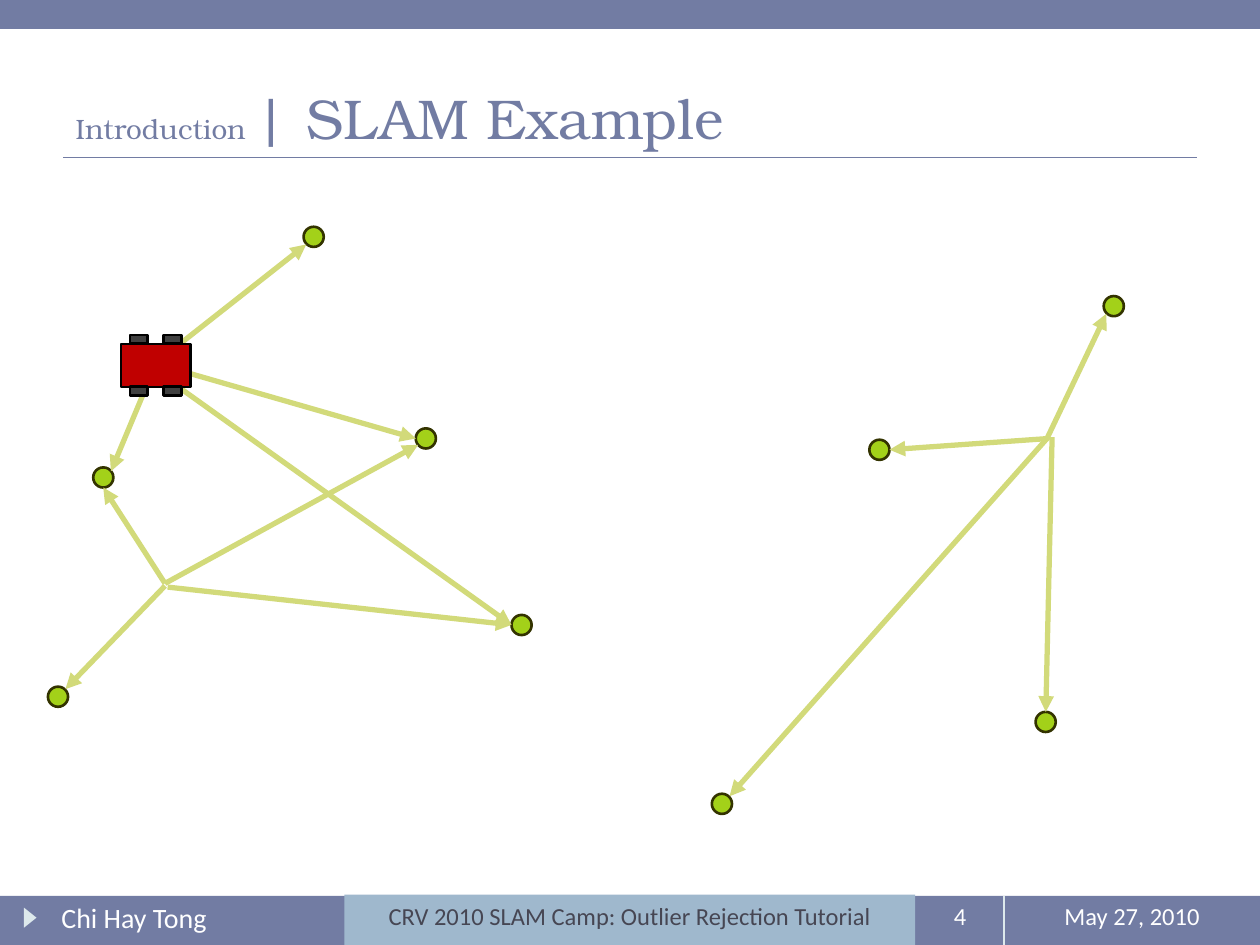
import dataclasses

import lxml.etree
import pptx
import pptx.dml.color
import pptx.enum.shapes
import pptx.enum.text
import pptx.oxml.ns
import pptx.util

Pt = pptx.util.Pt
Rgb = pptx.dml.color.RGBColor.from_string
Kind = pptx.enum.shapes.MSO_SHAPE
Align = pptx.enum.text.PP_ALIGN
Anchor = pptx.enum.text.MSO_ANCHOR
qn = pptx.oxml.ns.qn


@dataclasses.dataclass(frozen=True)
class Theme:
    slate: str = "727CA3"
    pale: str = "DDE9EC"
    sky: str = "9FB8CD"
    dark: str = "464653"
    white: str = "FFFFFF"
    green: str = "99CC00"
    rim: str = "333300"
    ray: str = "D2DA7A"
    red: str = "C00000"
    wheel: str = "404040"
    black: str = "000000"
    serif: str = "TeX Gyre Bonum"
    sans: str = "Calibri"
    large: int = 32
    mid: int = 16
    small: int = 14


theme = Theme()


def write(frame, text, size=theme.small, color=theme.white, font=theme.sans, align=Align.LEFT):
    """Add a run to the first paragraph of the frame."""
    frame.word_wrap = True
    para = frame.paragraphs[0]
    para.alignment = align
    run = para.add_run()
    run.text = text
    run.font.size = Pt(size)
    run.font.name = font
    run.font.color.rgb = Rgb(color)


def draw(shapes, kind, box, fill, edge=None):
    """Add a preset shape with a flat fill and, if edge is given, an outline."""
    shape = shapes.add_shape(kind, *map(Pt, box))
    shape.shadow.inherit = False
    shape.fill.solid()
    shape.fill.fore_color.rgb = Rgb(fill)
    if edge:
        shape.line.color.rgb = Rgb(edge)
        shape.line.width = Pt(1.5)
    else:
        shape.line.fill.background()
    return shape


deck = pptx.Presentation()
deck.slide_width, deck.slide_height = Pt(720), Pt(540)
slide = deck.slides.add_slide(deck.slide_layouts[5])
shapes = slide.shapes

# Title
title = shapes.title
title.left, title.top, title.width, title.height = map(Pt, (36, 18, 648, 72))
title.text_frame.vertical_anchor = Anchor.BOTTOM
for text, size in (("Introduction ", theme.mid), ("| SLAM Example", theme.large)):
    write(title.text_frame, text, size=size, color=theme.slate, font=theme.serif)

# Bars and footer
draw(shapes, Kind.RECTANGLE, (0, 0, 720, 16.5), theme.slate)
draw(shapes, Kind.RECTANGLE, (0, 512, 720, 28), theme.slate)
mark = draw(shapes, Kind.ISOSCELES_TRIANGLE, (11.5, 520.8, 11.5, 7.2), theme.pale)
mark.rotation = 90

foot, tall = 511.2, 28.8
for left, width, text, size, align in (
    (28, 156, "Chi Hay Tong", theme.mid, Align.LEFT),
    (523.4, 50.4, "4", theme.small, Align.CENTER),
    (573.8, 146.2, "May 27, 2010", theme.small, Align.CENTER),
):
    label = shapes.add_textbox(Pt(left), Pt(foot), Pt(width), Pt(tall))
    write(label.text_frame, text, size=size, align=align)

event = draw(shapes, Kind.RECTANGLE, (196.8, foot, 326.2, tall), theme.sky)
event.text_frame.vertical_anchor = Anchor.TOP
write(event.text_frame, "CRV 2010 SLAM Camp: Outlier Rejection Tutorial",
      color=theme.dark, align=Align.CENTER)

# Landmarks
for left, top in (
    (173.5, 129.6), (53.3, 267.1), (237.6, 244.8),
    (630.7, 169.2), (496.8, 251.3), (591.8, 406.8),
    (292.3, 351.4), (27.4, 392.4), (406.8, 453.6),
):
    dot = draw(shapes, Kind.OVAL, (left, top, 11.5, 11.5), theme.green, theme.rim)
    tint = dot.fill._xPr.find(qn("a:solidFill"))[0]
    lxml.etree.SubElement(tint, qn("a:alpha"), val="90000")

# Rules, then sightings from each pose to its landmarks
rules = [(36, 90, 684, 90, theme.slate), (573.8, 512, 573.8, 540, theme.pale)]
rays = [
    (90, 206.6, 175, 139.7),
    (90, 208.1, 237.6, 250.6),
    (87.8, 211, 63.4, 269.3),
    (87.8, 211, 292.3, 357.1),
    (599, 250.6, 508.3, 257),
    (601.2, 249.8, 597.6, 406.8),
    (599, 249.8, 416.9, 455),
    (598.3, 250.6, 632.2, 179.3),
    (94.3, 334.8, 37.4, 393.8),
    (94.3, 333.4, 59, 278.6),
    (94.3, 333.4, 239, 254.2),
    (95.8, 335.5, 292.3, 357.1),
]
for *ends, color in rules + [(*ray, theme.ray) for ray in rays]:
    line = shapes.add_connector(pptx.enum.shapes.MSO_CONNECTOR.STRAIGHT, *map(Pt, ends))
    line.line.color.rgb = Rgb(color)
    line.line.width = Pt(3 if color == theme.ray else 0.75)
    if color == theme.ray:
        lxml.etree.SubElement(line.line._get_or_add_ln(), qn("a:tailEnd"), type="triangle")
    lxml.etree.SubElement(line._element.spPr, qn("a:effectLst"))

# Robot
robot = shapes.add_group_shape().shapes
draw(robot, Kind.RECTANGLE, (69.1, 196.6, 39.6, 24.5), theme.red, theme.black)
for left in (74.2, 93.6):
    for top in (191.5, 221):
        draw(robot, Kind.RECTANGLE, (left, top, 10.1, 5), theme.wheel, theme.black)

deck.save("out.pptx")
